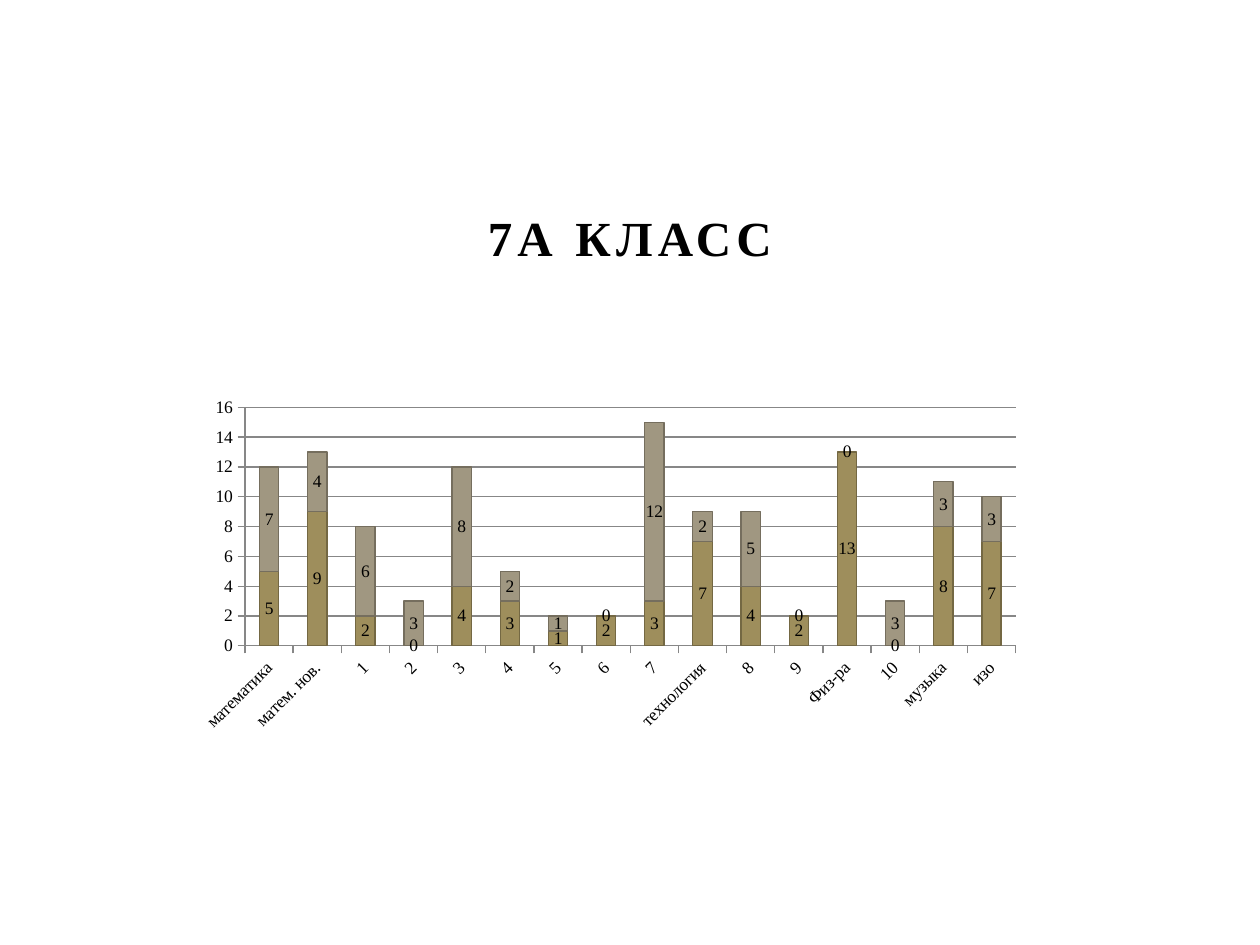
from pptx import Presentation
from pptx.chart.data import CategoryChartData as Data
from pptx.dml.color import RGBColor
from pptx.enum.chart import XL_CHART_TYPE as Kind, XL_LABEL_POSITION as Spot, XL_TICK_MARK as Tick
from pptx.enum.text import MSO_ANCHOR as Anchor, PP_ALIGN as Align
from pptx.oxml import parse_xml
from pptx.oxml.ns import nsdecls, qn
from pptx.util import Pt

BLACK = RGBColor(0, 0, 0)
GRAY = RGBColor(0x87, 0x87, 0x87)
GOLD = RGBColor(0x9E, 0x8E, 0x5C)
TAUPE = RGBColor(0xA0, 0x97, 0x81)
EDGES = {GOLD: RGBColor(0x74, 0x68, 0x43), TAUPE: RGBColor(0x75, 0x6E, 0x5E)}

NAMES = ["математика", "матем. нов.", "1", "2", "3", "4", "5", "6", "7",
         "технология", "8", "9", "Физ-ра", "10", "музыка", "изо"]
ROWS = [
    ("Series 1", GOLD, [5, 9, 2, 0, 4, 3, 1, 2, 3, 7, 4, 2, 13, 0, 8, 7]),
    ("Series 2", TAUPE, [7, 4, 6, 3, 8, 2, 1, 0, 12, 2, 5, 0, 0, 3, 3, 3]),
]
PLOT = {"x": 0.066, "y": 0.17, "w": 0.908, "h": 0.568}


class Deck:
    """Holds the text style and the current slide."""

    def __init__(self, face, color):
        self.face, self.color = face, color
        self.show = Presentation()
        self.show.slide_width, self.show.slide_height = Pt(720), Pt(540)
        self.slide = self.show.slides.add_slide(self.show.slide_layouts[5])

    def style(self, font, size, bold=False):
        font.name, font.size, font.bold = self.face, Pt(size), bold
        font.color.rgb = self.color

    def title(self, text, box, size, gap):
        shape = self.slide.shapes.title
        shape.left, shape.top, shape.width, shape.height = map(Pt, box)
        frame = shape.text_frame
        frame.text, frame.word_wrap = text, True
        frame.vertical_anchor = Anchor.BOTTOM
        line = frame.paragraphs[0]
        line.alignment = Align.CENTER
        self.style(line.font, size, True)
        for run in line.runs:
            run.font._element.set("spc", str(gap * 100))

    def chart(self, names, rows, box, size):
        data = Data(number_format="General")
        data.categories = names
        for name, _, vals in rows:
            data.add_series(name, vals)
        frame = self.slide.shapes.add_chart(Kind.COLUMN_STACKED, *map(Pt, box), data)
        chart = frame.chart
        chart.has_legend = chart.has_title = False
        self.style(chart.font, size)
        self.place(chart, PLOT)
        self.axes(chart, size)
        plot = chart.plots[0]
        plot.gap_width, plot.overlap, plot.vary_by_categories = 150, 100, False
        for bar, (_, color, _) in zip(plot.series, rows):
            self.paint(bar, color, size)

    def paint(self, bar, color, size):
        bar.format.fill.solid()
        bar.format.fill.fore_color.rgb = color
        bar.format.line.color.rgb = EDGES[color]
        bar.format.line.width = Pt(0.75)
        tags = bar.data_labels
        tags.show_value, tags.position = True, Spot.CENTER
        self.style(tags.font, size)

    def axes(self, chart, size):
        base, scale = chart.category_axis, chart.value_axis
        for axis in (base, scale):
            axis.major_tick_mark, axis.minor_tick_mark = Tick.OUTSIDE, Tick.NONE
            axis.format.line.color.rgb = GRAY
            axis.format.line.width = Pt(0.75)
            self.style(axis.tick_labels.font, size)
        body = base._element.find(f"{qn('c:txPr')}/{qn('a:bodyPr')}")
        body.set("rot", "-2700000")
        body.set("vert", "horz")
        scale.minimum_scale, scale.maximum_scale, scale.major_unit = 0, 16, 2
        scale.has_major_gridlines = True
        scale.major_gridlines.format.line.color.rgb = GRAY
        scale.major_gridlines.format.line.width = Pt(0.75)

    def place(self, chart, part):
        area = chart._chartSpace.chart.plotArea
        for old in area.findall(qn("c:layout")):
            area.remove(old)
        modes = "".join(f'<c:{key}Mode val="edge"/>' for key in "xy")
        sizes = "".join(f'<c:{key} val="{val}"/>' for key, val in part.items())
        area.insert(0, parse_xml(
            f'<c:layout {nsdecls("c")}><c:manualLayout><c:layoutTarget val="inner"/>'
            f"{modes}{sizes}</c:manualLayout></c:layout>"))


def main():
    deck = Deck("Times New Roman", BLACK)
    deck.title("7А КЛАСС", (108, 102, 504, 54), 28, 3)
    deck.chart(NAMES, ROWS, (108, 192, 485, 240), 10)
    deck.show.save("out.pptx")


if __name__ == "__main__":
    main()
